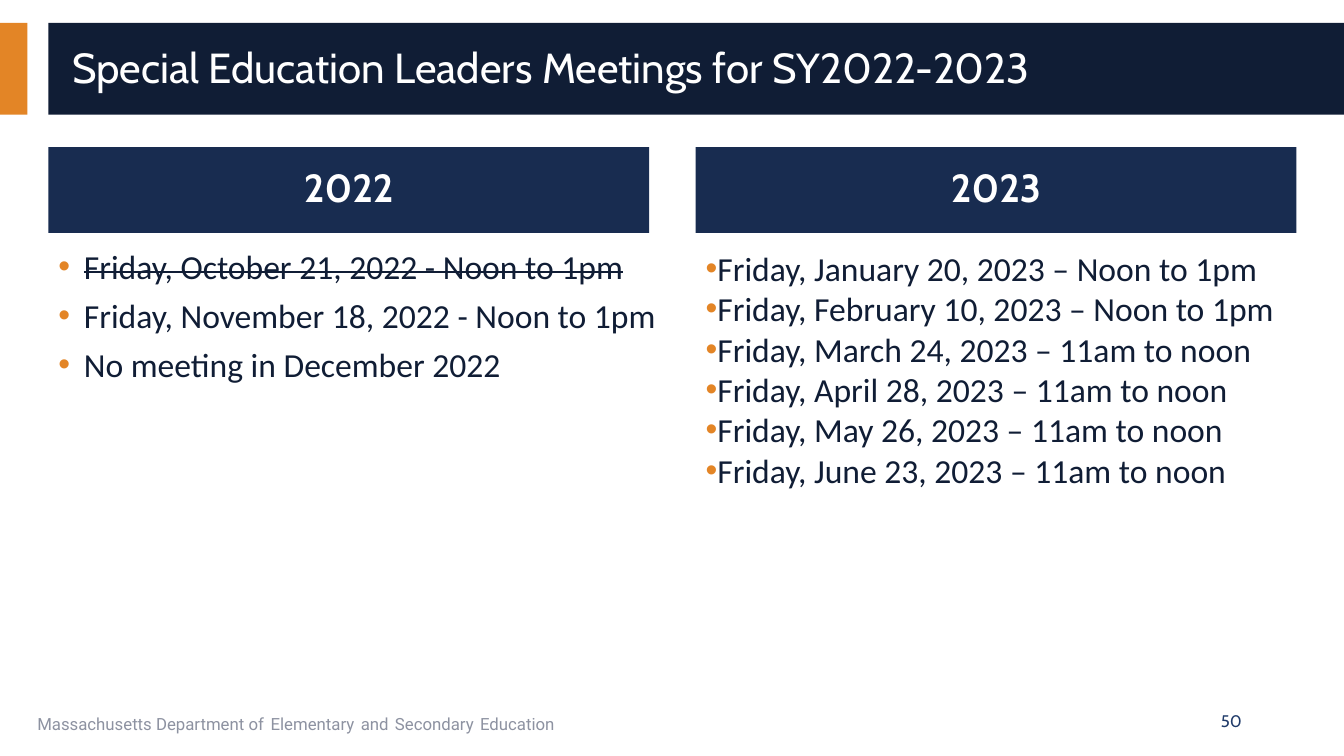
from lxml import etree
from pptx import Presentation
from pptx import util as u
from pptx.dml.color import RGBColor
from pptx.enum import shapes, text
from pptx.oxml.ns import qn

ORANGE, NAVY, BLUE = "E38526", "101D35", "182C50"
WHITE, GREY, PAGE_BLUE = "FFFFFF", "8D92A1", "203B6A"
SLIDE_W, SLIDE_H = 33.87, 19.05
LEFT = 1.22
COL_W, HEAD_H, LIST_H = 15.14, 2.16, 10.54

MEETINGS_2022 = [
    "Friday, October 21, 2022 - Noon to 1pm",
    "Friday, November 18, 2022 - Noon to 1pm",
    "No meeting in December 2022",
]
MEETINGS_2023 = [
    "Friday, January 20, 2023 – Noon to 1pm",
    "Friday, February 10, 2023 – Noon to 1pm",
    "Friday, March 24, 2023 – 11am to noon",
    "Friday, April 28, 2023 – 11am to noon",
    "Friday, May 26, 2023 – 11am to noon",
    "Friday, June 23, 2023 – 11am to noon",
]
FOOTER = ["Massachusetts Department of", "Elementary", "and", "Secondary", "Education"]


def rgb(color):
    return RGBColor.from_string(color)


def place(sp, x, y, w, h):
    sp.left, sp.top, sp.width, sp.height = (u.Cm(v) for v in (x, y, w, h))


def frame(sp, anchor=text.MSO_ANCHOR.TOP):
    tf = sp.text_frame
    tf.word_wrap = True
    tf.auto_size = text.MSO_AUTO_SIZE.NONE
    tf.vertical_anchor = anchor
    return tf


def write(p, words, size, color, font, bold=False, strike=False,
          align=text.PP_ALIGN.LEFT, spacing=1.0, before=0, after=0):
    """Append a formatted run to p and set the paragraph's spacing."""
    p.alignment, p.line_spacing = align, spacing
    p.space_before, p.space_after = u.Pt(before), u.Pt(after)
    r = p.add_run()
    r.text = words
    r.font.size, r.font.name, r.font.bold = u.Pt(size), font, bold
    r.font.color.rgb = rgb(color)
    if strike:
        r.font._element.set("strike", "sngStrike")


def bullet(p, margin, color):
    """Give p a round bullet hanging 0.64 cm before its margin."""
    pPr = p._p.get_or_add_pPr()
    pPr.set("marL", str(u.Cm(margin)))
    pPr.set("indent", str(u.Cm(-0.64)))
    clr = etree.SubElement(pPr, qn("a:buClr"))
    etree.SubElement(clr, qn("a:srgbClr")).set("val", color)
    etree.SubElement(pPr, qn("a:buFont")).set("typeface", "Arial")
    etree.SubElement(pPr, qn("a:buChar")).set("char", "•")


def bar(s, x, y, w, h, color):
    """Draw a plain block behind the placeholders."""
    sp = s.shapes.add_shape(shapes.MSO_SHAPE.RECTANGLE, *(u.Cm(v) for v in (x, y, w, h)))
    sp.shadow.inherit = False
    sp.fill.solid()
    sp.fill.fore_color.rgb = rgb(color)
    sp.line.fill.background()
    s.shapes._spTree.insert(2, sp._element)


def title_band(s, y, h, words):
    bar(s, 0, y, 0.69, h, ORANGE)
    bar(s, LEFT, y, SLIDE_W - LEFT, h, NAVY)
    place(s.shapes.title, LEFT + 0.35, y + 0.23, 31.75, 1.88)
    tf = frame(s.shapes.title, text.MSO_ANCHOR.MIDDLE)
    write(tf.paragraphs[0], words, 30, WHITE, "Cabin", spacing=0.9)


def year_column(head, body, x, y, year, meetings, list_w=COL_W, gap=0.25,
                margin=0, after=0, past=0):
    """Fill a heading and the list below it; the first `past` meetings are struck out."""
    place(head, x, y, COL_W, HEAD_H)
    head.fill.solid()
    head.fill.fore_color.rgb = rgb(BLUE)
    tf = frame(head, text.MSO_ANCHOR.MIDDLE)
    write(tf.paragraphs[0], year, 28, WHITE, "Cabin", bold=True,
          align=text.PP_ALIGN.CENTER, spacing=0.9, before=10)

    place(body, x, y + HEAD_H + gap, list_w, LIST_H)
    tf = frame(body)
    for i, meeting in enumerate(meetings):
        p = tf.paragraphs[0] if i == 0 else tf.add_paragraph()
        write(p, meeting, 24, NAVY, "Calibri", strike=i < past, after=after)
        bullet(p, margin, ORANGE)


def footer(s, y, h, parts, number):
    sp = s.shapes.add_textbox(u.Cm(0.69), u.Cm(y), u.Cm(21.44), u.Cm(h))
    p = frame(sp).paragraphs[0]
    for i, part in enumerate(parts):
        if i:
            write(p, " ", 18, PAGE_BLUE, "Roboto")
        write(p, part, 12, GREY, "Roboto")

    sp = s.shapes.add_textbox(u.Cm(23.93), u.Cm(y), u.Cm(7.62), u.Cm(h))
    tf = frame(sp, text.MSO_ANCHOR.MIDDLE)
    write(tf.paragraphs[0], number, 12, PAGE_BLUE, "Cabin", align=text.PP_ALIGN.RIGHT)


def main():
    prs = Presentation()
    prs.slide_width, prs.slide_height = u.Cm(SLIDE_W), u.Cm(SLIDE_H)
    s = prs.slides.add_slide(prs.slide_layouts.get_by_name("Comparison"))
    ph = {sp.placeholder_format.idx: sp for sp in s.placeholders}

    title_band(s, 0.58, 2.31, "Special Education Leaders Meetings for SY2022-2023")
    year_column(ph[1], ph[2], LEFT, 3.71, "2022", MEETINGS_2022,
                list_w=15.72, gap=0.2, margin=0.64, after=6, past=1)
    year_column(ph[3], ph[4], 17.53, 3.71, "2023", MEETINGS_2023)
    footer(s, 17.65, 1.02, FOOTER, "50")
    prs.save("out.pptx")


if __name__ == "__main__":
    main()
